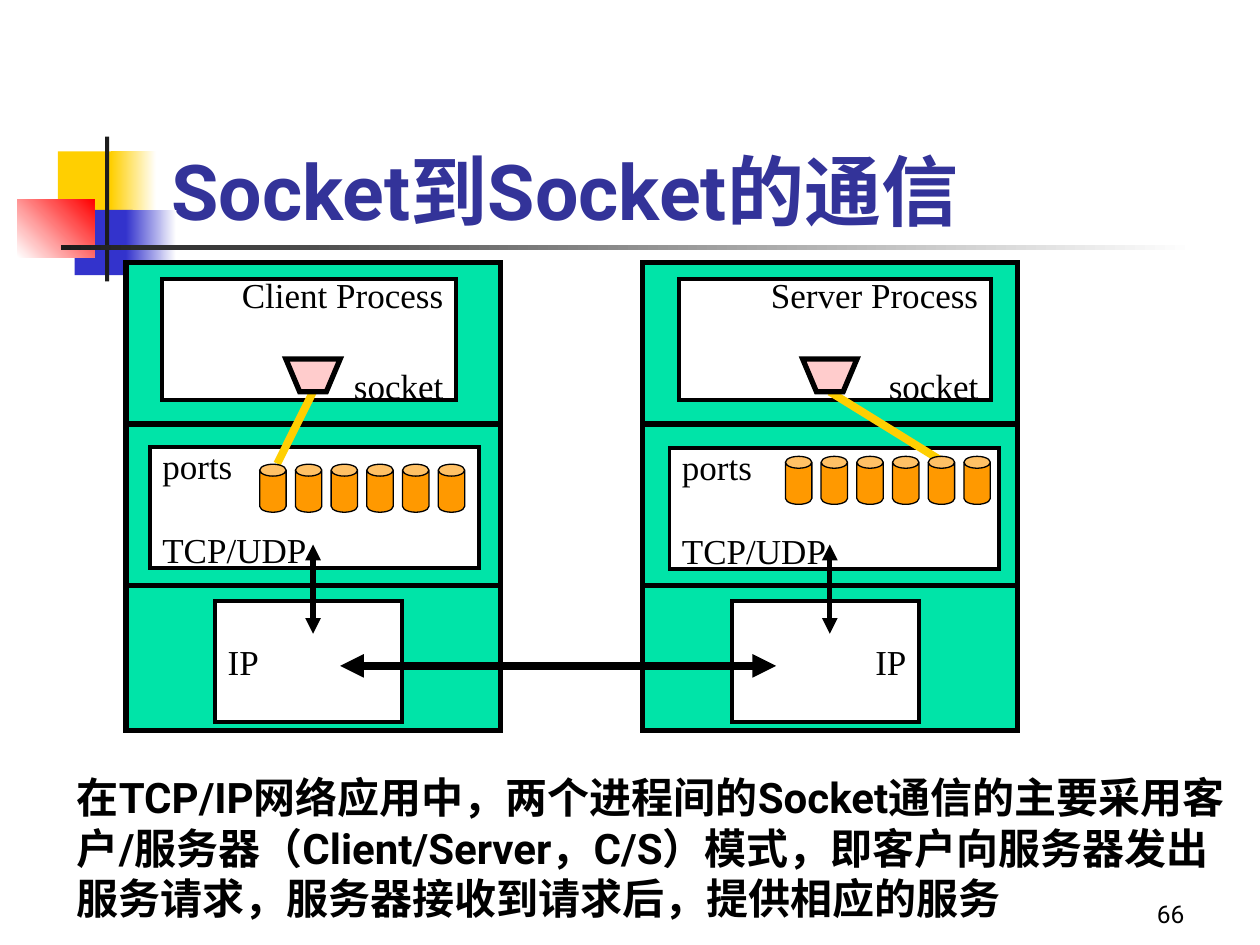
from lxml import etree
from pptx import Presentation
from pptx.dml.color import RGBColor
from pptx.enum.shapes import MSO_CONNECTOR as Connector, MSO_SHAPE as Shape
from pptx.enum.text import MSO_ANCHOR as Anchor, MSO_AUTO_SIZE as AutoSize, PP_ALIGN as Align
from pptx.oxml.ns import qn
from pptx.util import Pt

color = RGBColor.from_string
BLACK, WHITE, YELLOW, BLUE, DARK = "000000", "FFFFFF", "FFCF01", "3333CC", "1C1C1C"
SERIF, SANS = "Times New Roman", "Roboto"


def style(shape, fill, line_width=0):
    """Fill a shape, outline it in black with sharp corners if a width is given, drop its shadow."""
    shape.shadow.inherit = False
    shape.fill.solid()
    shape.fill.fore_color.rgb = color(fill)
    if line_width:
        shape.line.color.rgb = color(BLACK)
        shape.line.width = Pt(line_width)
        outline_xml = shape._element.spPr.find(qn("a:ln"))
        etree.SubElement(outline_xml, qn("a:miter"), lim="800000")
    else:
        shape.line.fill.background()
    return shape


def add_line(x1, y1, x2, y2, width, line_color=BLACK, arrows=False):
    line = page.shapes.add_connector(Connector.STRAIGHT, Pt(x1), Pt(y1), Pt(x2), Pt(y2))
    line.line.color.rgb = color(line_color)
    line.line.width = Pt(width)
    properties = line._element.spPr
    if arrows:
        for end in ("a:headEnd", "a:tailEnd"):
            etree.SubElement(properties.find(qn("a:ln")), qn(end), type="triangle")
    etree.SubElement(properties, qn("a:effectLst"))


deck = Presentation()
deck.slide_width, deck.slide_height = Pt(720), Pt(540)
page = deck.slides.add_slide(deck.slide_layouts[5])

# Title ornament: left, top, width, height, colours from start to end, angle
ornament = [
    (33.1, 86.5, 34.6, 37.4, [YELLOW], 0),
    (63.4, 86.5, 25.9, 37.4, [YELLOW, WHITE], 0),
    (42.7, 119.9, 33.1, 37.4, [BLUE], 0),
    (72, 119.9, 28.8, 37.4, [BLUE, WHITE], 0),
    (10, 113.8, 44, 33.1, [WHITE, "FF0000"], 45),
    (60, 78, 2.4, 82.8, [DARK], 0),
    (34.8, 140.2, 648, 2.4, [DARK, WHITE], 0),
]
for left, top, width, height, colors, angle in ornament:
    block = page.shapes.add_shape(Shape.RECTANGLE, Pt(left), Pt(top), Pt(width), Pt(height))
    style(block, colors[0])
    if len(colors) == 2:
        block.fill.gradient()
        block.fill.gradient_angle = angle
        for stop, stop_color in zip(block.fill.gradient_stops, colors):
            stop.color.rgb = color(stop_color)

# Title, explanation and page number
title = page.shapes.title
title.left, title.top, title.width, title.height = Pt(90.7), Pt(48.2), Pt(613.4), Pt(90)
explanation = page.shapes.add_textbox(Pt(36.8), Pt(437.5), Pt(670.5), Pt(93.6))
page_number = page.shapes.add_textbox(Pt(534.2), Pt(498.2), Pt(149.8), Pt(36))
texts = [
    (title, "Socket到Socket的通信", 44, "333399", True, Align.LEFT, Anchor.BOTTOM),
    (explanation,
     "在TCP/IP网络应用中，两个进程间的Socket通信的主要采用客户/服务器（Client/Server，C/S）模式，"
     "即客户向服务器发出服务请求，服务器接收到请求后，提供相应的服务",
     24, BLACK, True, Align.LEFT, Anchor.TOP),
    (page_number, "66", 14, BLACK, False, Align.RIGHT, Anchor.BOTTOM),
]
for box, text, size, text_color, bold, align, anchor in texts:
    frame = box.text_frame
    frame.word_wrap = True
    frame.auto_size = AutoSize.NONE
    frame.vertical_anchor = anchor
    para = frame.paragraphs[0]
    para.alignment = align
    span = para.add_run()
    span.text = text
    span.font.name, span.font.size, span.font.bold = SANS, Pt(size), bold
    span.font.color.rgb = color(text_color)

# Hosts: left edge, role, process width, transport left and top, IP alignment,
# first port left and top, x where the socket line meets its port
hosts = [
    (72, "Client", 168, 85.7, 255.5, Align.LEFT, 148.4, 265.3, 158.4),
    (367.3, "Server", 178.4, 382.6, 256, Align.RIGHT, 448.8, 260.8, 540.7),
]
for (left, role, process_width, transport_left, transport_top, ip_align,
     port_left, port_top, port_x) in hosts:
    host = page.shapes.add_shape(Shape.RECTANGLE, Pt(left), Pt(150), Pt(214), Pt(267.4))
    style(host, "00E4A8", 3)
    for divider_y in (242.3, 334.5):
        add_line(left, divider_y, left + 214, divider_y, 3)

    layers = [
        (left + 20.5, 159.5, process_width, [f"{role} Process", "socket"], Align.RIGHT, 28),
        (transport_left, transport_top, 188.2, ["ports", "TCP/UDP"], Align.LEFT, 24),
        (left + 51, 343.4, 106.8, ["IP"], ip_align, 0),
    ]
    for layer_left, layer_top, layer_width, lines, align, gap in layers:
        layer = page.shapes.add_shape(
            Shape.RECTANGLE, Pt(layer_left), Pt(layer_top), Pt(layer_width), Pt(69.1))
        style(layer, WHITE, 2.25)
        frame = layer.text_frame
        frame.word_wrap = True
        frame.vertical_anchor = Anchor.MIDDLE
        for index, text in enumerate(lines):
            para = frame.add_paragraph() if index else frame.paragraphs[0]
            para.alignment = align
            para.space_before = Pt(gap if index else 0)
            span = para.add_run()
            span.text = text
            span.font.name, span.font.size = SERIF, Pt(20)
            span.font.color.rgb = color(BLACK)

    socket_x = left + 106.9
    add_line(socket_x, 223.9, port_x, 265, 4.5, YELLOW)
    add_line(socket_x, 311.2, socket_x, 362.2, 3, arrows=True)
    for index in range(6):
        port = page.shapes.add_shape(
            Shape.CAN, Pt(port_left + 20.4 * index), Pt(port_top), Pt(15.1), Pt(27.4))
        port.adjustments[0] = 0.45
        style(port, "FF9900", 0.75)

    outline = page.shapes.build_freeform(Pt(socket_x - 15.5), Pt(205.2))
    outline.add_line_segments([
        (Pt(socket_x - 7.6), Pt(223.9)),
        (Pt(socket_x + 7.6), Pt(223.9)),
        (Pt(socket_x + 15.5), Pt(205.2)),
    ], close=True)
    style(outline.convert_to_shape(), "FFCCCC", 3)

add_line(194.4, 380.5, 443.5, 380.5, 4.5, arrows=True)

deck.save("out.pptx")
